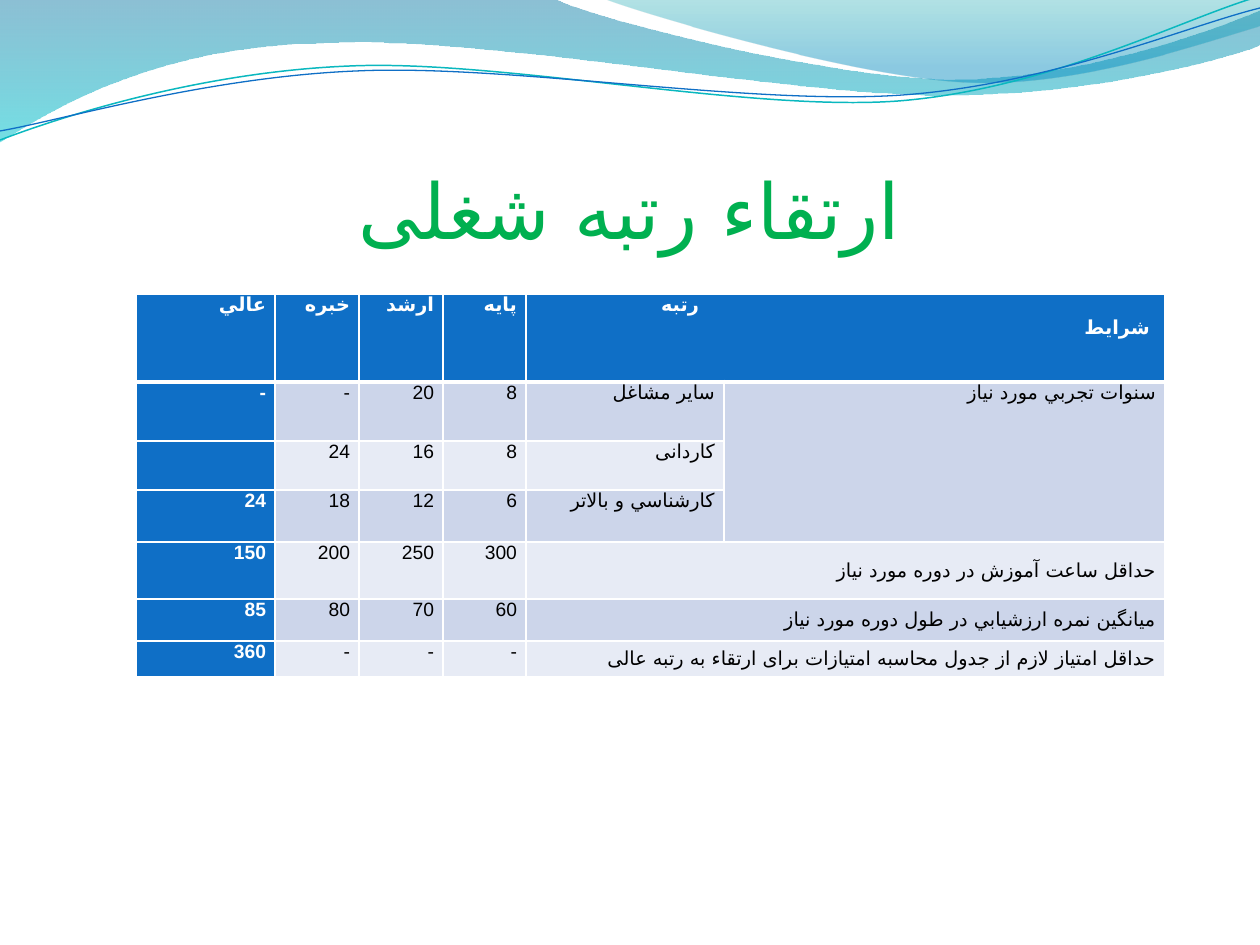
from lxml import etree
from pptx import Presentation
from pptx.dml.color import RGBColor
from pptx.enum.text import MSO_ANCHOR, PP_ALIGN
from pptx.oxml.ns import qn
from pptx.util import Pt

PX = 914400 // 126
TOP, MIDDLE, BOTTOM = MSO_ANCHOR.TOP, MSO_ANCHOR.MIDDLE, MSO_ANCHOR.BOTTOM
CENTER, RIGHT = PP_ALIGN.CENTER, PP_ALIGN.RIGHT
TITLE_FONT, TABLE_FONT = "Calibri", "TeX Gyre Pagella"
PERSIAN_FONT, DIGIT_FONT = "DejaVu Sans", "Arial"
TITLE_LAYOUT = 5

COLORS = {
    "title": "00B050", "white": "FFFFFF", "black": "000000",
    "blue": "0F6FC6", "teal": "0AB8BF",
    "odd_row": "CCD5EA", "even_row": "E7EBF5",
    "wave_top": "0074A1", "wave_bottom": "00C6CF",
    "crest_top": "00A1A9", "crest_bottom": "008BBF",
}

# Each step is a list of points: one for a straight line, three for a cubic curve.
WAVE = [[(0, 0)], [(554, -1)],
        [(600, 21), (837, 79), (955, 79)], [(1075, 79), (1207, 33), (1260, 11)],
        [(1261, 45)],
        [(1239, 55), (1096, 96), (940, 95)], [(784, 95), (481, 35), (324, 43)],
        [(163, 45), (58, 105), (-1, 142)]]
CREST = [[(604, -1)],
         [(641, 14), (859, 78), (969, 82)], [(1079, 87), (1211, 40), (1260, 26)],
         [(1260, 0)]]
TEAL_LINE = [[(0, 140)],
             [(60, 117), (199, 72), (349, 66)], [(498, 59), (747, 112), (898, 101)],
             [(1049, 89), (1182, 19), (1257, -3)]]
BLUE_LINE = [[(0, 131)],
             [(59, 121), (207, 77), (357, 71)], [(508, 64), (752, 106), (903, 95)],
             [(1053, 84), (1187, 26), (1260, 8)]]

COLUMNS = [139, 84, 84, 83, 198, 441]
ROWS = [88, 59, 49, 52, 57, 42, 36]
HEADER_INDENTS = [457, 6]
CELLS = [
    ["عالي", "خبره", "ارشد", "پايه", "رتبه\nشرايط", ""],
    ["-", "-", "20", "8", "سایر مشاغل", "سنوات تجربي مورد نیاز"],
    ["", "24", "16", "8", "کاردانی", ""],
    ["24", "18", "12", "6", "كارشناسي و بالاتر", ""],
    ["150", "200", "250", "300", "حداقل ساعت آموزش در دوره مورد نیاز", ""],
    ["85", "80", "70", "60", "ميانگين نمره ارزشيابي در طول دوره مورد نیاز", ""],
    ["360", "-", "-", "-",
     "حداقل امتیاز لازم از جدول محاسبه امتیازات برای ارتقاء به رتبه عالی", ""],
]
WIDE_ROWS = [0, 4, 5, 6]


def rgb(name):
    return RGBColor.from_string(COLORS[name])


def add_outline(page, steps, close):
    """Build straight segments between the step ends, then bend the curved ones."""
    ends = [(x * PX, y * PX) for x, y in (step[-1] for step in steps)]
    builder = page.shapes.build_freeform(*ends[0])
    builder.add_line_segments(ends[1:], close=close)
    shape = builder.convert_to_shape()
    shape.shadow.inherit = False
    segments = list(shape._element.spPr.iter(qn("a:lnTo")))
    for segment, step in zip(segments, steps[1:]):
        if len(step) == 3:
            curve = etree.Element(qn("a:cubicBezTo"))
            for x, y in step:
                etree.SubElement(curve, qn("a:pt"), x=str(x * PX - shape.left),
                                 y=str(y * PX - shape.top))
            segment.getparent().replace(segment, curve)
    return shape


def add_wave(page, steps, stops):
    """stops holds (position, colour, opacity in percent), from top to bottom."""
    shape = add_outline(page, steps, True)
    shape.line.fill.background()
    shape.fill.gradient()
    shape.fill.gradient_angle = 270
    for stop, (position, color, _) in zip(shape.fill.gradient_stops, stops):
        stop.position = position
        stop.color.rgb = rgb(color)
    colors = list(shape._element.spPr.iter(qn("a:srgbClr")))
    for element, (_, _, opacity) in zip(colors, stops):
        etree.SubElement(element, qn("a:alpha"), val=str(opacity * 1000))


def add_curve(page, steps, color, width):
    shape = add_outline(page, steps, False)
    shape.fill.background()
    shape.line.color.rgb = rgb(color)
    shape.line.width = Pt(width)


def add_span(para, text, font, size, color, bold=False):
    span = para.add_run()
    span.text = text
    span.font.name = font
    span.font.size = Pt(size)
    span.font.bold = bold
    span.font.color.rgb = rgb(color)
    script_font = DIGIT_FONT if text.isdigit() or text == "-" else PERSIAN_FONT
    etree.SubElement(span._r.get_or_add_rPr(), qn("a:cs"), typeface=script_font)


def set_title(page, text):
    box = page.shapes.title
    box.left, box.top, box.width, box.height = [n * PX for n in (63, 97, 1134, 158)]
    frame = box.text_frame
    frame.vertical_anchor = BOTTOM
    frame.margin_left = frame.margin_right = frame.margin_bottom = 0
    frame.margin_top = 6 * PX
    para = frame.paragraphs[0]
    para.alignment = CENTER
    add_span(para, text, TITLE_FONT, 44, "title")


def set_border(cell, side, width):
    line = etree.SubElement(cell._tc.get_or_add_tcPr(), qn(f"a:ln{side}"), w=str(Pt(width)))
    fill = etree.SubElement(line, qn("a:solidFill"))
    etree.SubElement(fill, qn("a:srgbClr"), val=COLORS["white"])


def write_cell(cell, text, color, bold, indents):
    """Write each line as a right-to-left paragraph, indented from its start."""
    frame = cell.text_frame
    for i, line in enumerate(text.split("\n")):
        para = frame.add_paragraph() if i else frame.paragraphs[0]
        para.alignment = RIGHT
        para.line_spacing = 1.0
        properties = para._p.get_or_add_pPr()
        properties.set("rtl", "1")
        if indents:
            properties.set("marL", str(indents[i] * PX))
            properties.set("indent", "0")
        if line:
            add_span(para, line, TABLE_FONT, 11, color, bold)


def format_cell(cell, row, column):
    strong = row == 0 or column == 0
    cell.margin_left = cell.margin_right = 9 * PX
    cell.margin_top = cell.margin_bottom = 0
    cell.vertical_anchor = MIDDLE if row >= 4 and column == 4 else TOP
    for side in "LRTB":
        under_header = (row, side) in [(0, "B"), (1, "T")]
        set_border(cell, side, 3 if under_header else 1)
    cell.fill.solid()
    cell.fill.fore_color.rgb = rgb("blue" if strong else "odd_row" if row % 2 else "even_row")
    indents = HEADER_INDENTS if (row, column) == (0, 4) else None
    write_cell(cell, CELLS[row][column], "white" if strong else "black", strong, indents)


def add_rank_table(page):
    frame = page.shapes.add_table(len(ROWS), len(COLUMNS), 136 * PX, 294 * PX,
                                  sum(COLUMNS) * PX, sum(ROWS) * PX)
    table = frame.table
    for column, width in zip(table.columns, COLUMNS):
        column.width = width * PX
    for row, height in zip(table.rows, ROWS):
        row.height = height * PX
    for row in range(len(ROWS)):
        for column in range(len(COLUMNS)):
            format_cell(table.cell(row, column), row, column)
    for row in WIDE_ROWS:
        table.cell(row, 4).merge(table.cell(row, 5))
    table.cell(1, 5).merge(table.cell(3, 5))


def main():
    deck = Presentation()
    deck.slide_width, deck.slide_height = 1260 * PX, 945 * PX
    page = deck.slides.add_slide(deck.slide_layouts[TITLE_LAYOUT])
    add_wave(page, WAVE, [(0, "wave_top", 45), (1, "wave_bottom", 55)])
    add_wave(page, CREST, [(0, "crest_top", 30), (0.8, "crest_bottom", 45)])
    add_curve(page, TEAL_LINE, "teal", 0.85)
    add_curve(page, BLUE_LINE, "blue", 0.75)
    set_title(page, "ارتقاء رتبه شغلی")
    add_rank_table(page)
    deck.save("out.pptx")


if __name__ == "__main__":
    main()
